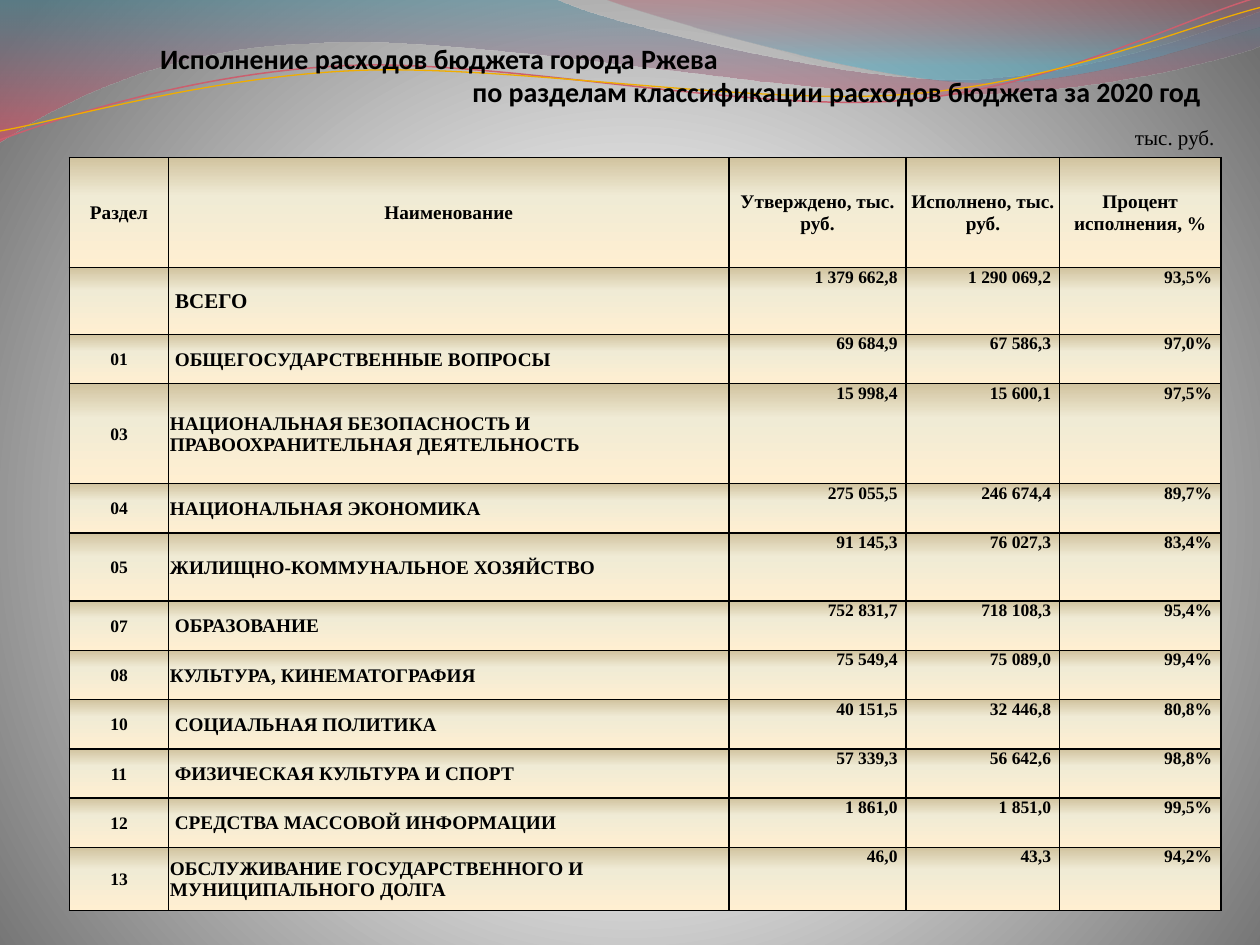
from math import cos, radians, sin

from lxml import etree
from pptx import Presentation
from pptx.dml.color import RGBColor
from pptx.enum.text import MSO_ANCHOR, PP_ALIGN
from pptx.oxml.ns import qn
from pptx.util import Inches, Pt

LEFT, CENTER, RIGHT = PP_ALIGN.LEFT, PP_ALIGN.CENTER, PP_ALIGN.RIGHT
TOP, MIDDLE, BOTTOM = MSO_ANCHOR.TOP, MSO_ANCHOR.MIDDLE, MSO_ANCHOR.BOTTOM
SERIF = "Times New Roman"
RIBBON_TILT = 2.7
BORDER_SIDES = ("a:lnL", "a:lnR", "a:lnT", "a:lnB")

BACKGROUND_STOPS = [(0, "FFFFFF", 100), (25, "FFFFFF", 100), (100, "707070", 100)]
CELL_STOPS = [(0, "FFEFD1", 100), (65, "F0EBD5", 100), (100, "D1C39F", 100)]

WAVES = [
    ([(0, 0), (4.4, -0.01),
      (4.76, 0.17, 6.64, 0.63, 7.58, 0.63), (8.53, 0.63, 9.58, 0.26, 10, 0.09),
      (10.01, 0.36),
      (9.83, 0.44, 8.7, 0.76, 7.46, 0.75), (6.22, 0.75, 3.82, 0.28, 2.57, 0.34),
      (1.29, 0.36, 0.46, 0.83, -0.01, 1.13), (0, 0)],
     [(0, "3F8A9F", 45), (100, "EF445B", 55)]),
    ([(4.79, -0.01),
      (5.09, 0.11, 6.82, 0.62, 7.69, 0.65), (8.56, 0.69, 9.61, 0.32, 10, 0.21),
      (10, 0), (4.79, -0.01)],
     [(0, "B84253", 30), (80, "42ABC7", 45)]),
]
RIBBONS = [
    ([(0, 1.11), (0.48, 0.93, 1.58, 0.57, 2.77, 0.52),
      (3.95, 0.47, 5.93, 0.89, 7.13, 0.8), (8.33, 0.71, 9.38, 0.15, 9.98, -0.02)],
     (4.99, 0.58), "CB5F6E", 0.85),
    ([(0, 1.04), (0.47, 0.96, 1.64, 0.61, 2.83, 0.56),
      (4.03, 0.51, 5.97, 0.84, 7.17, 0.75), (8.36, 0.67, 9.41, 0.21, 10, 0.06)],
     (5, 0.59), "F0AD00", 0.75),
]

TABLE_WIDTH, TABLE_HEIGHT = 9.14, 5.98
COLUMN_SHARES = [0.79, 4.45, 1.41, 1.22, 1.28]
ROW_SHARES = [0.87, 0.53, 0.39, 0.79, 0.39, 0.54] + [0.39] * 5 + [0.5]
HEADER = ["Раздел", "Наименование", "Утверждено, тыс. руб.",
          "Исполнено, тыс. руб.", "Процент исполнения, %"]
EXPENSES = [
    ["", " ВСЕГО", "1 379 662,8", "1 290 069,2", "93,5%"],
    ["01", " ОБЩЕГОСУДАРСТВЕННЫЕ ВОПРОСЫ", "69 684,9", "67 586,3", "97,0%"],
    ["03", "НАЦИОНАЛЬНАЯ БЕЗОПАСНОСТЬ И ПРАВООХРАНИТЕЛЬНАЯ ДЕЯТЕЛЬНОСТЬ",
     "15 998,4", "15 600,1", "97,5%"],
    ["04", "НАЦИОНАЛЬНАЯ ЭКОНОМИКА", "275 055,5", "246 674,4", "89,7%"],
    ["05", "ЖИЛИЩНО-КОММУНАЛЬНОЕ ХОЗЯЙСТВО", "91 145,3", "76 027,3", "83,4%"],
    ["07", " ОБРАЗОВАНИЕ", "752 831,7", "718 108,3", "95,4%"],
    ["08", "КУЛЬТУРА, КИНЕМАТОГРАФИЯ", "75 549,4", "75 089,0", "99,4%"],
    ["10", " СОЦИАЛЬНАЯ ПОЛИТИКА", "40 151,5", "32 446,8", "80,8%"],
    ["11", " ФИЗИЧЕСКАЯ КУЛЬТУРА И СПОРТ", "57 339,3", "56 642,6", "98,8%"],
    ["12", " СРЕДСТВА МАССОВОЙ ИНФОРМАЦИИ", "1 861,0", "1 851,0", "99,5%"],
    ["13", "ОБСЛУЖИВАНИЕ ГОСУДАРСТВЕННОГО И МУНИЦИПАЛЬНОГО ДОЛГА",
     "46,0", "43,3", "94,2%"],
]


def color(value):
    return RGBColor.from_string(value)


def apply(target, values):
    for key, value in values.items():
        setattr(target, key, value)


def margins(left, top, right, bottom):
    return {"margin_left": Inches(left), "margin_top": Inches(top),
            "margin_right": Inches(right), "margin_bottom": Inches(bottom)}


def add_element(parent, tag, **attributes):
    element = etree.SubElement(parent, qn(tag))
    for key, value in attributes.items():
        element.set(key, str(value))
    return element


def set_gradient(fill, holder, stops, angle=None):
    fill.gradient()
    gradient = holder.find(".//" + qn("a:gradFill"))
    gradient.clear()
    gradient.set("rotWithShape", "1")
    stop_list = add_element(gradient, "a:gsLst")
    for position, value, opacity in stops:
        stop = add_element(stop_list, "a:gs", pos=position * 1000)
        tint = add_element(stop, "a:srgbClr", val=value)
        if opacity < 100:
            add_element(tint, "a:alpha", val=opacity * 1000)
    if angle is None:
        circle = add_element(gradient, "a:path", path="circle")
        add_element(circle, "a:fillToRect", l=10000, t=110000, r=10000, b=100000)
    else:
        add_element(gradient, "a:lin", ang=angle * 60000, scaled=0)


def points_of(segment):
    return list(zip(segment[::2], segment[1::2]))


def add_outline(slide, segments, close):
    curves = [[(Inches(x), Inches(y)) for x, y in points_of(s)] for s in segments]
    anchors = [curve[-1] for curve in curves]
    builder = slide.shapes.build_freeform(*anchors[0])
    builder.add_line_segments(anchors[1:], close=close)
    outline = builder.convert_to_shape()
    outline.shadow.inherit = False
    lines = list(outline._element.spPr.iter(qn("a:lnTo")))
    for line, curve in zip(lines, curves[1:]):
        if len(curve) == 3:
            line.tag = qn("a:cubicBezTo")
            line.clear()
            for x, y in curve:
                add_element(line, "a:pt", x=x - outline.left, y=y - outline.top)
    return outline


def add_wave(slide, segments, stops):
    wave = add_outline(slide, segments, True)
    set_gradient(wave.fill, wave._element.spPr, stops, 90)
    wave.line.fill.background()


def turn(segment, center, degrees):
    cx, cy = center
    c, s = cos(radians(degrees)), sin(radians(degrees))
    return [value for x, y in points_of(segment)
            for value in (cx + (x - cx) * c - (y - cy) * s,
                          cy + (x - cx) * s + (y - cy) * c)]


def add_ribbon(slide, segments, center, value, width):
    level = [turn(segment, center, RIBBON_TILT) for segment in segments]
    ribbon = add_outline(slide, level, False)
    ribbon.rotation = -RIBBON_TILT
    ribbon.fill.background()
    ribbon.line.color.rgb = color(value)
    ribbon.line.width = Pt(width)


def write(paragraph, text, font, size, bold, alignment):
    paragraph.alignment = alignment
    run = paragraph.add_run()
    run.text = text
    apply(run.font, {"name": font, "size": Pt(size), "bold": bold})
    run.font.color.rgb = color("000000")


def add_label(slide, box, lines, frame_format, font, size, bold):
    frame = slide.shapes.add_textbox(*map(Inches, box)).text_frame
    apply(frame, frame_format)
    for index, (text, alignment) in enumerate(lines):
        paragraph = frame.add_paragraph() if index else frame.paragraphs[0]
        write(paragraph, text, font, size, bold, alignment)


def add_borders(cell):
    properties = cell._tc.get_or_add_tcPr()
    for side in BORDER_SIDES:
        border = add_element(properties, side, w=Pt(1))
        add_element(add_element(border, "a:solidFill"), "a:srgbClr", val="000000")


def cell_style(row, column):
    if row == 0:
        return 11, CENTER
    if column == 0:
        return 10, CENTER
    if column == 1:
        return (12 if row == 1 else 11), LEFT
    return 10, RIGHT


def add_expense_table(slide):
    rows = [HEADER] + EXPENSES
    table = slide.shapes.add_table(
        len(rows), len(HEADER), Inches(0.55), Inches(1.25),
        Inches(TABLE_WIDTH), Inches(TABLE_HEIGHT)).table
    apply(table, {"first_row": False, "horz_banding": False})
    for column, share in zip(table.columns, COLUMN_SHARES):
        column.width = Inches(TABLE_WIDTH * share / sum(COLUMN_SHARES))
    for row, share in zip(table.rows, ROW_SHARES):
        row.height = Inches(TABLE_HEIGHT * share / sum(ROW_SHARES))
    for r, texts in enumerate(rows):
        for c, text in enumerate(texts):
            cell = table.cell(r, c)
            size, alignment = cell_style(r, c)
            is_amount = alignment == RIGHT
            apply(cell, margins(0.07, 0, 0.07, 0) if is_amount
                  else margins(0.01, 0.01, 0.01, 0))
            cell.vertical_anchor = TOP if is_amount else MIDDLE
            add_borders(cell)
            set_gradient(cell.fill, cell._tc.tcPr, CELL_STOPS, 270)
            if text:
                write(cell.text_frame.paragraphs[0], text, SERIF, size, True, alignment)


def main():
    deck = Presentation()
    apply(deck, {"slide_width": Inches(10), "slide_height": Inches(7.5)})
    slide = deck.slides.add_slide(deck.slide_layouts[6])
    set_gradient(slide.background.fill, slide._element, BACKGROUND_STOPS)
    for wave in WAVES:
        add_wave(slide, *wave)
    for ribbon in RIBBONS:
        add_ribbon(slide, *ribbon)
    title = [("Исполнение расходов бюджета города Ржева", LEFT),
             ("по разделам классификации расходов бюджета за 2020 год", RIGHT)]
    add_label(slide, (1.25, 0.31, 8.75, 0.55), title,
              {"word_wrap": True, "vertical_anchor": BOTTOM, **margins(0.02, 0, 0.47, 0)},
              "Calibri", 16, True)
    add_expense_table(slide)
    add_label(slide, (8.91, 0.94, 0.84, 0.3), [("тыс. руб.", LEFT)],
              {"word_wrap": False}, SERIF, 12, False)
    deck.save("out.pptx")


if __name__ == "__main__":
    main()
